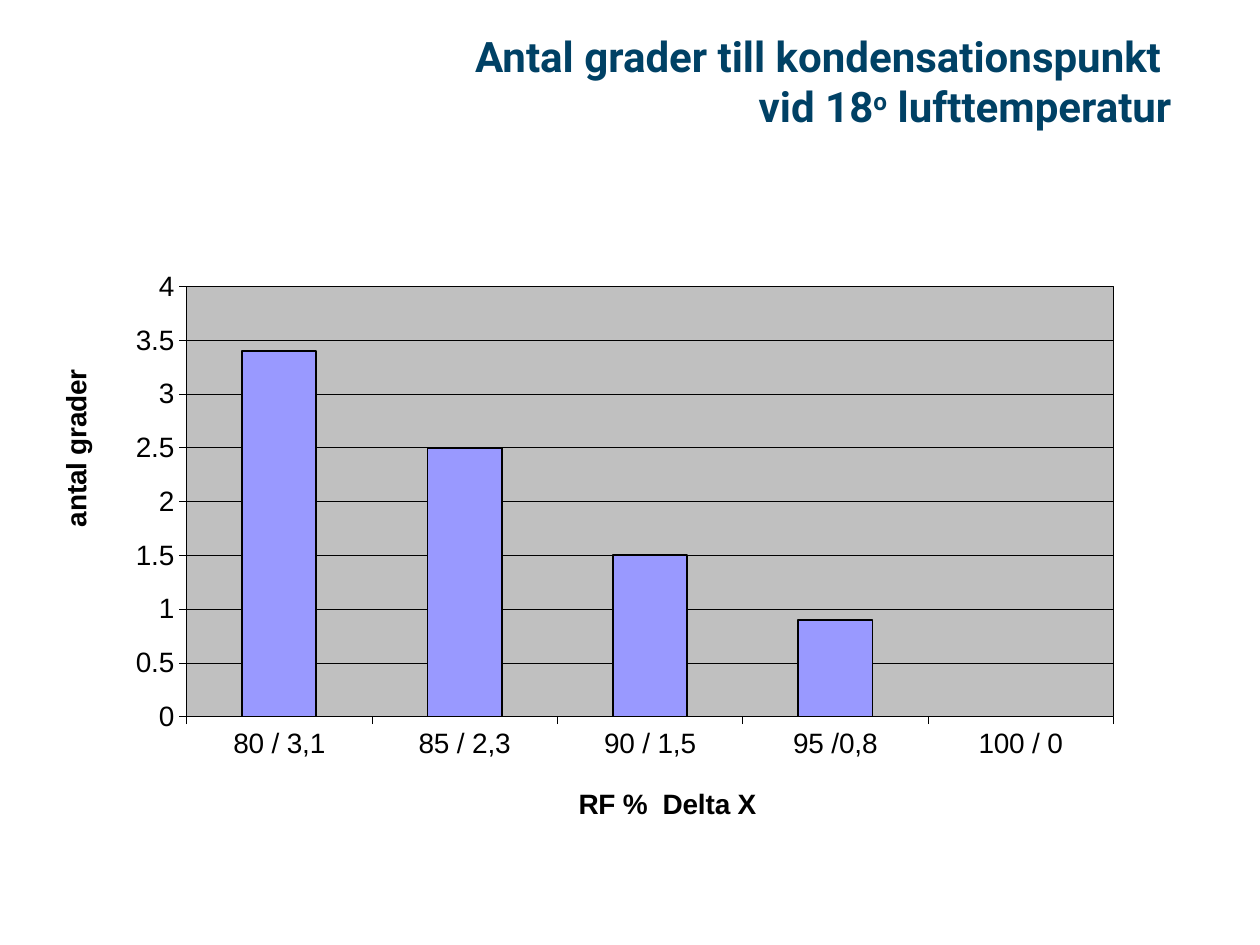
from lxml import etree
from pptx import Presentation
from pptx.chart.data import CategoryChartData
from pptx.dml.color import RGBColor
from pptx.enum.chart import XL_CHART_TYPE as Chart, XL_TICK_MARK as Tick
from pptx.enum.text import MSO_ANCHOR as Anchor, MSO_AUTO_SIZE as Fit, PP_ALIGN as Align
from pptx.oxml import parse_xml
from pptx.oxml.ns import nsdecls, qn
from pptx.util import Cm, Pt

COLORS = {"title": "004165", "ink": "000000", "plot": "C0C0C0", "bar": "9999FF"}


def color(name):
    return RGBColor.from_string(COLORS[name])


class SlideBuilder:
    title_font = "Roboto"
    chart_font = "Arial"
    title_size = Pt(24)
    axis_size = Pt(16)
    thin = Pt(0.25)

    def __init__(self, slide):
        self.slide = slide

    def style(self, font, name, size, ink, bold=False):
        font.name, font.size, font.bold = name, size, bold
        font.color.rgb = color(ink)

    def line(self, line, width):
        line.color.rgb = color("ink")
        line.width = width

    def title(self, box, lines):
        sp = self.slide.shapes.title
        sp.left, sp.top, sp.width, sp.height = (Cm(v) for v in box)
        tf = sp.text_frame
        tf.word_wrap, tf.auto_size = True, Fit.NONE
        tf.vertical_anchor = Anchor.MIDDLE
        p = tf.paragraphs[0]
        p.alignment = Align.RIGHT
        for i, runs in enumerate(lines):
            if i:
                p.add_line_break()
            for text, raised in runs:
                r = p.add_run()
                r.text = text
                self.style(r.font, self.title_font, self.title_size, "title", True)
                if raised:
                    r.font._element.set("baseline", "30000")

    def layout(self, parent, index, inner=False, **fractions):
        for old in parent.findall(qn("c:layout")):
            parent.remove(old)
        layout = parse_xml(f"<c:layout {nsdecls('c')}><c:manualLayout/></c:layout>")
        settings = {"layoutTarget": "inner"} if inner else {}
        settings.update(xMode="edge", yMode="edge", **fractions)
        for tag, value in settings.items():
            etree.SubElement(layout[0], qn(f"c:{tag}")).set("val", str(value))
        parent.insert(index, layout)

    def axis(self, axis, title, x, y):
        axis.major_tick_mark, axis.minor_tick_mark = Tick.OUTSIDE, Tick.NONE
        self.style(axis.tick_labels.font, self.chart_font, self.axis_size, "ink")
        self.line(axis.format.line, self.thin)
        r = axis.axis_title.text_frame.paragraphs[0].add_run()
        r.text = title
        self.style(r.font, self.chart_font, self.axis_size, "ink", True)
        self.layout(axis.axis_title._element, 1, x=x, y=y)

    def column_chart(self, box, categories, name, values):
        data = CategoryChartData()
        data.categories = categories
        data.add_series(name, values)
        frame = self.slide.shapes.add_chart(
            Chart.COLUMN_CLUSTERED, *(Cm(v) for v in box), data)
        chart = frame.chart
        chart.has_legend = chart.has_title = False
        self.style(chart.font, self.chart_font, Pt(10), "ink")
        plot = chart.plots[0]
        plot.gap_width, plot.vary_by_categories = 150, False
        series = plot.series[0]
        series.format.fill.solid()
        series.format.fill.fore_color.rgb = color("bar")
        self.line(series.format.line, Pt(1))
        self.axis(chart.category_axis, "RF %  Delta X", 0.476, 0.93)
        values_axis = chart.value_axis
        self.axis(values_axis, "antal grader", 0.02, 0.336)
        values_axis.minimum_scale, values_axis.maximum_scale = 0, 4
        values_axis.major_unit = 0.5
        values_axis.tick_labels.number_format = "General"
        values_axis.tick_labels.number_format_is_linked = False
        self.line(values_axis.major_gridlines.format.line, self.thin)
        area = plot._element.getparent()
        self.layout(area, 0, inner=True, x=0.137, y=0.225, w=0.812, h=0.613)
        area.append(parse_xml(
            f"<c:spPr {nsdecls('c', 'a')}>"
            f'<a:solidFill><a:srgbClr val="{COLORS["plot"]}"/></a:solidFill>'
            f'<a:ln w="{self.thin}"><a:solidFill><a:srgbClr val="{COLORS["ink"]}"/>'
            "</a:solidFill></a:ln></c:spPr>"))


def main():
    prs = Presentation()
    prs.slide_width, prs.slide_height = Cm(25.4), Cm(19.05)
    s = SlideBuilder(prs.slides.add_slide(prs.slide_layouts[5]))
    s.title((5.38, 0.74, 18.49, 1.78), [
        [("Antal grader till kondensationspunkt ", False)],
        [("vid 18", False), ("o", True), (" lufttemperatur", False)],
    ])
    s.column_chart(
        (0.61, 2.59, 23.01, 14.15),
        ["80 / 3,1", "85 / 2,3", "90 / 1,5", "95 /0,8", "100 / 0"],
        "Series 1", [3.4, 2.5, 1.5, 0.9, 0])
    prs.save("out.pptx")


if __name__ == "__main__":
    main()
